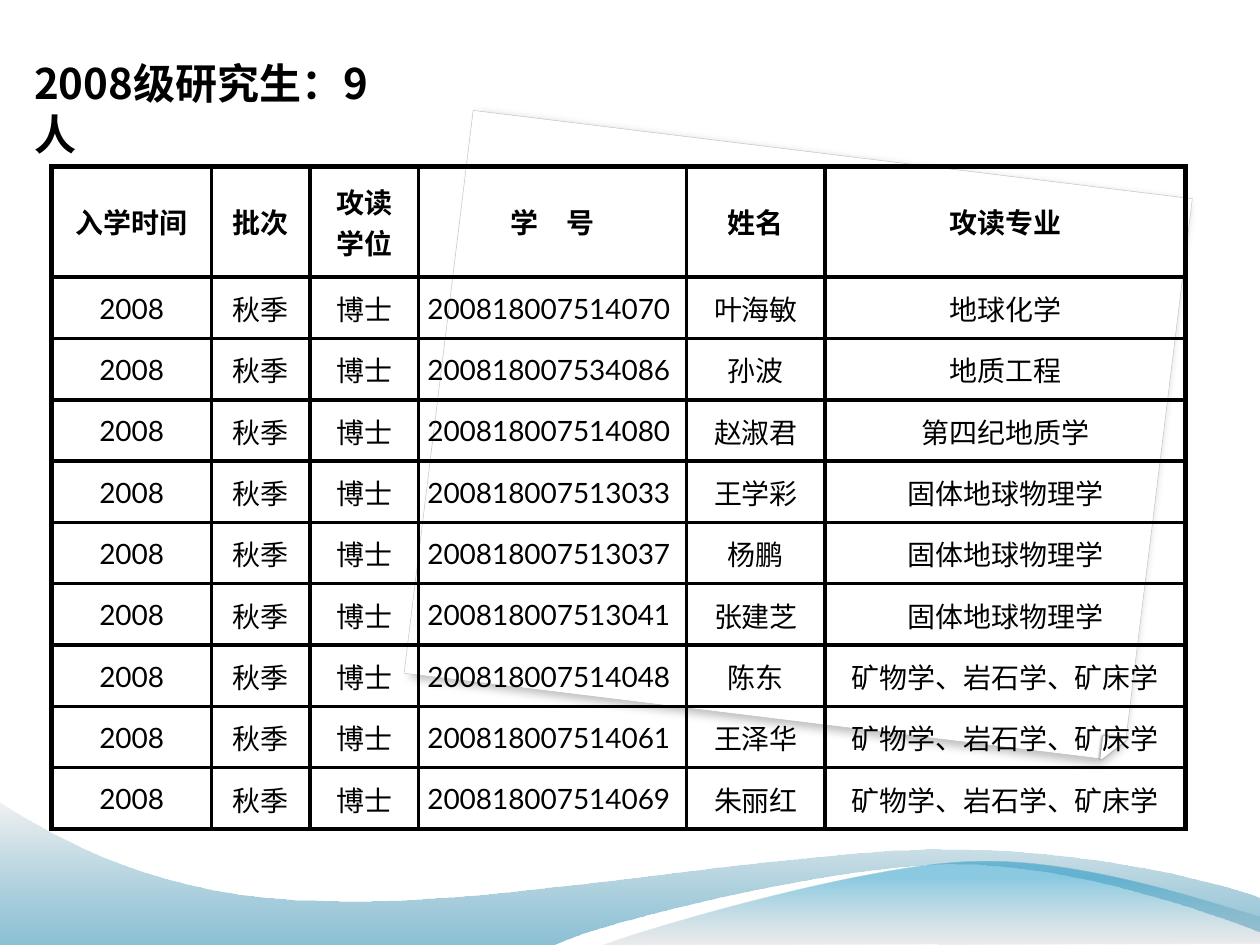
from lxml import etree
from pptx import Presentation
from pptx.dml.color import RGBColor
from pptx.enum import shapes, text
from pptx.oxml import parse_xml
from pptx.oxml.ns import nsdecls, qn
from pptx.util import Inches, Pt

CJK, LATIN = "Noto Sans CJK SC", "Lato"
BLACK, WHITE = "000000", "FFFFFF"


def rgb(code):
    return RGBColor.from_string(code)


def add_run(paragraph, words, size, font, bold):
    run = paragraph.add_run()
    run.text = words
    run.font.size, run.font.bold, run.font.name = Pt(size), bold, font
    run.font.color.rgb = rgb(BLACK)
    etree.SubElement(run.font._element, qn("a:ea")).set("typeface", CJK)


prs = Presentation()
prs.slide_width, prs.slide_height = Inches(10), Inches(7.5)
slide = prs.slides.add_slide(prs.slide_layouts[5])

# Tilted sheet of paper with its folded corner
# preset, left, top, width, height, line colour, line width,
# shadow: opacity, blur, distance, angle, horizontal scale
papers = [
    (shapes.MSO_SHAPE.SNIP_ROUND_RECTANGLE, 3.46, 1.21, 5.75, 4.5, "C0C0C0", 0.25, (25, 5, 3, 125, 98.5)),
    (shapes.MSO_SHAPE.RIGHT_TRIANGLE, 8.75, 5.86, 0.17, 0.17, WHITE, 1, (47, 1.6, 0.5, 215, 100)),
]
for preset, left, top, width, height, edge, weight, (opacity, blur, distance, angle, stretch) in papers:
    paper = slide.shapes.add_shape(preset, Inches(left), Inches(top), Inches(width), Inches(height))
    if preset == shapes.MSO_SHAPE.SNIP_ROUND_RECTANGLE:
        paper.adjustments[0], paper.adjustments[1] = 0, 0.036
    paper.rotation = 7
    paper.fill.solid()
    paper.fill.fore_color.rgb = rgb(WHITE)
    paper.line.color.rgb = rgb(edge)
    paper.line.width = Pt(weight)
    paper.shadow.inherit = False
    properties = paper._element.spPr
    properties.find(qn("a:xfrm")).set("flipV", "1")
    properties.find(qn("a:effectLst")).append(parse_xml(
        f'<a:outerShdw {nsdecls("a")} blurRad="{Pt(blur)}" dist="{Pt(distance)}" '
        f'dir="{angle * 60000}" sx="{int(stretch * 1000)}" algn="tl" rotWithShape="0"><a:srgbClr val="{BLACK}">'
        f'<a:alpha val="{opacity * 1000}"/></a:srgbClr></a:outerShdw>'))

# Waves: a pair is a straight step, six numbers are a Bezier step
# gradient stops run from the bottom up: position, colour, opacity
waves = [
    ([(0, 7.5), (4.4, 7.5), (4.76, 7.32, 6.64, 6.86, 7.58, 6.86), (8.53, 6.86, 9.58, 7.24, 10, 7.4),
      (10.01, 7.13), (9.83, 7.05, 8.7, 6.73, 7.46, 6.74), (6.22, 6.74, 3.82, 7.21, 2.57, 7.15),
      (1.29, 7.14, 0.46, 6.66, -0.01, 6.36)],
     [(0, "0074A1", 45), (100, "E7E7E7", 55)]),
    ([(4.79, 7.5), (5.09, 7.38, 6.82, 6.87, 7.69, 6.84), (8.56, 6.8, 9.61, 7.17, 10, 7.28), (10, 7.49)],
     [(0, "BDBDBD", 30), (80, "008BBF", 45)]),
]
for steps, stops in waves:
    corners = [(Inches(step[-2]), Inches(step[-1])) for step in steps]
    builder = slide.shapes.build_freeform(*corners[0], scale=1.0)
    builder.add_line_segments(corners[1:], close=True)
    wave = builder.convert_to_shape()
    wave.line.fill.background()
    wave.shadow.inherit = False
    wave.fill.gradient()
    properties = wave._element.spPr
    outline = properties.find(".//" + qn("a:path"))
    for step, segment in zip(steps[1:], outline.findall(qn("a:lnTo"))):
        if len(step) == 6:
            handles = "".join(
                f'<a:pt x="{Inches(x) - wave.left}" y="{Inches(y) - wave.top}"/>'
                for x, y in zip(step[::2], step[1::2]))
            outline.replace(segment, parse_xml(f'<a:cubicBezTo {nsdecls("a")}>{handles}</a:cubicBezTo>'))
    stop_xml = "".join(
        f'<a:gs pos="{place * 1000}"><a:srgbClr val="{colour}"><a:alpha val="{opacity * 1000}"/></a:srgbClr></a:gs>'
        for place, colour, opacity in stops)
    properties.replace(properties.find(qn("a:gradFill")), parse_xml(
        f'<a:gradFill {nsdecls("a")}><a:gsLst>{stop_xml}</a:gsLst><a:lin ang="{270 * 60000}" scaled="0"/></a:gradFill>'))

title = slide.shapes.title
title.left, title.top, title.width, title.height = Inches(0.17), Inches(0.41), Inches(3.08), Inches(0.5)
title.text_frame.word_wrap = True
title.text_frame.auto_size = text.MSO_AUTO_SIZE.NONE
title.text_frame.vertical_anchor = text.MSO_ANCHOR.TOP
heading = title.text_frame.paragraphs[0]
heading.alignment = text.PP_ALIGN.LEFT
add_run(heading, "2008级研究生：9人", 24, CJK, True)

header = ("入学时间", "批次", "攻读学位", "学　号", "姓名", "攻读专业")
students = [
    ("200818007514070 ", "叶海敏", "地球化学"),
    ("200818007534086 ", "孙波", "地质工程"),
    ("200818007514080 ", "赵淑君", "第四纪地质学"),
    ("200818007513033 ", "王学彩", "固体地球物理学"),
    ("200818007513037 ", "杨鹏", "固体地球物理学"),
    ("200818007513041 ", "张建芝", "固体地球物理学"),
    ("200818007514048 ", "陈东", "矿物学、岩石学、矿床学"),
    ("200818007514061 ", "王泽华", "矿物学、岩石学、矿床学"),
    ("200818007514069 ", "朱丽红", "矿物学、岩石学、矿床学"),
]
rows = [header] + [("2008", "秋季", "博士") + student for student in students]
column_widths = (1.27, 0.78, 0.86, 2.13, 1.1, 2.86)
table_height, header_height = 5.26, 0.88
student_height = (table_height - header_height) / len(students)
roster = slide.shapes.add_table(
    len(rows), len(header), Inches(0.41), Inches(1.32), Inches(9), Inches(table_height)).table
roster.horz_banding = False
for column, width in zip(roster.columns, column_widths):
    column.width = Inches(width)

for r, row in enumerate(rows):
    is_header = r == 0
    roster.rows[r].height = Inches(header_height if is_header else student_height)
    for c, words in enumerate(row):
        cell = roster.cell(r, c)
        cell.vertical_anchor = text.MSO_ANCHOR.MIDDLE
        if not is_header:
            cell.margin_left = cell.margin_right = cell.margin_top = Inches(0.01)
            cell.margin_bottom = 0
        paragraph = cell.text_frame.paragraphs[0]
        paragraph.alignment = text.PP_ALIGN.CENTER
        add_run(paragraph, words, 16, CJK if is_header else LATIN, is_header)
        outer_sides = {"L": c == 0, "R": c == len(row) - 1, "T": is_header, "B": False}
        for side, is_outer in outer_sides.items():
            cell._tc.get_or_add_tcPr().append(parse_xml(
                f'<a:ln{side} {nsdecls("a")} w="{Pt(3 if is_outer else 2.25)}"><a:solidFill>'
                f'<a:srgbClr val="{BLACK}"/></a:solidFill></a:ln{side}>'))
        cell.fill.background()

prs.save("out.pptx")
